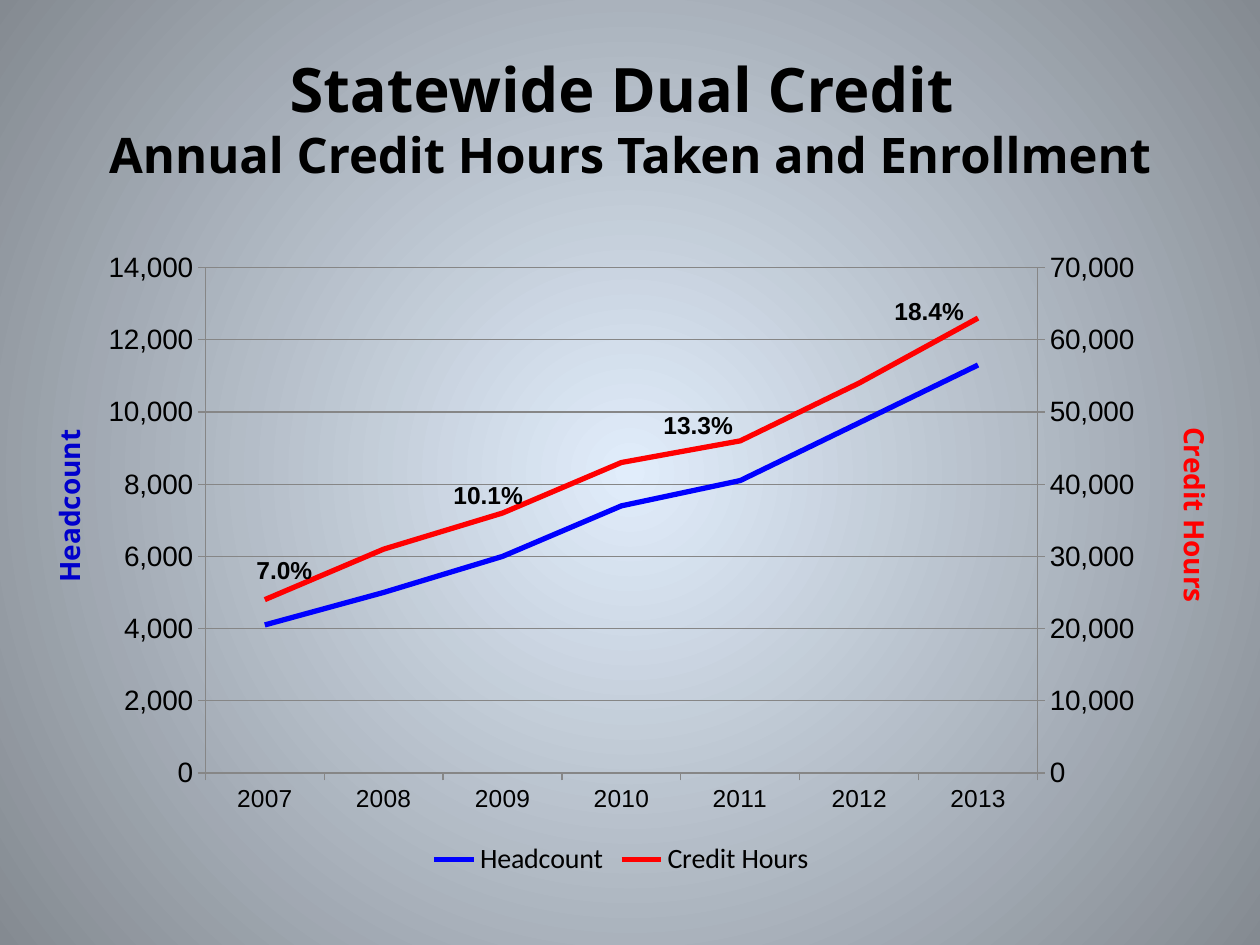
from copy import deepcopy

from lxml import etree
from pptx import Presentation
from pptx.chart.data import CategoryChartData
from pptx.dml.color import RGBColor
from pptx.enum.chart import XL_CHART_TYPE, XL_LEGEND_POSITION, XL_TICK_MARK
from pptx.enum.text import MSO_ANCHOR, MSO_AUTO_SIZE, PP_ALIGN
from pptx.oxml import parse_xml
from pptx.oxml.ns import nsdecls, qn
from pptx.util import Emu, Pt

PX = 914400 // 126
COLORS = {
    "glow": "E1EDFB", "edge": "848A91", "text": "000000", "grid": "868686",
    "blue": "0000FF", "navy": "0000CC", "red": "FF0000",
}


def rgb(name):
    return RGBColor.from_string(COLORS[name])


def add_text(box, lines, font, color="text", align=PP_ALIGN.CENTER):
    """Add bold lines, given as (text, points), in a box of px lengths."""
    shape = slide.shapes.add_textbox(*[Emu(n * PX) for n in box])
    frame = shape.text_frame
    frame.word_wrap = True
    for i, (text, size) in enumerate(lines):
        para = frame.paragraphs[0] if i == 0 else frame.add_paragraph()
        para.text = text
        para.alignment = align
        para.font.name = font
        para.font.size = Pt(size)
        para.font.bold = True
        para.font.color.rgb = rgb(color)
    return shape


prs = Presentation()
prs.slide_width, prs.slide_height = Emu(1260 * PX), Emu(945 * PX)
slide = prs.slides.add_slide(prs.slide_layouts[6])

# Background: a round glow from the centre
fill = slide.background.fill
fill.gradient()
for stop, name, place in zip(fill.gradient_stops, ("glow", "edge"), (0, 1)):
    stop.color.rgb = rgb(name)
    stop.position = place
grad = slide.element.find(".//" + qn("a:gradFill"))
grad.replace(grad.find(qn("a:lin")), parse_xml(
    f'<a:path {nsdecls("a")} path="circle">'
    '<a:fillToRect l="50000" t="50000" r="50000" b="50000"/></a:path>'))

# Chart
data = CategoryChartData(number_format="#,##0")
data.categories = [str(year) for year in range(2007, 2014)]
data.add_series("Headcount", (4100, 5000, 6000, 7400, 8100, 9700, 11300))
data.add_series("Credit Hours",
                (24000, 31000, 36000, 43000, 46000, 54000, 63000))
chart = slide.shapes.add_chart(
    XL_CHART_TYPE.LINE_STACKED,
    *[Emu(n * PX) for n in (88, 242, 1067, 640)], data).chart
chart.has_title = False
chart.font.name = "Calibri"
chart.font.size = Pt(10)
chart.font.color.rgb = rgb("text")
chart.has_legend = True
chart.legend.position = XL_LEGEND_POSITION.BOTTOM
chart.legend.include_in_layout = False
chart.legend.font.size = Pt(16)

for series, name in zip(chart.plots[0].series, ("blue", "red")):
    series.smooth = False
    series.format.line.color.rgb = rgb(name)
    series.format.line.width = Pt(3)

head = chart.value_axis
for axis, size in ((chart.category_axis, 14), (head, 16)):
    axis.major_tick_mark = XL_TICK_MARK.OUTSIDE
    axis.minor_tick_mark = XL_TICK_MARK.NONE
    axis.tick_labels.font.name = "Arial"
    axis.tick_labels.font.size = Pt(size)
    axis.format.line.color.rgb = rgb("grid")
head.minimum_scale, head.maximum_scale, head.major_unit = 0, 14000, 2000
head.has_major_gridlines = True
head.major_gridlines.format.line.color.rgb = rgb("grid")
head.tick_labels.number_format = "#,##0"
head.tick_labels.number_format_is_linked = False

# Second axis: credit hours move to a line plot of their own
area = chart.element.find(".//" + qn("c:plotArea"))
left = area.find(qn("c:lineChart"))
right = deepcopy(left)
left.remove(left.findall(qn("c:ser"))[1])
right.remove(right.findall(qn("c:ser"))[0])
left.addnext(right)
cat, val = area.find(qn("c:catAx")), area.find(qn("c:valAx"))
cat2, val2 = deepcopy(cat), deepcopy(val)
val.addnext(val2)
val2.addnext(cat2)
for node, ids in ((cat2, ("501", "502")), (val2, ("502", "501"))):
    node.find(qn("c:axId")).set("val", ids[0])
    node.find(qn("c:crossAx")).set("val", ids[1])
for node, name in zip(right.findall(qn("c:axId")), ("501", "502")):
    node.set("val", name)
cat2.find(qn("c:delete")).set("val", "1")
val2.remove(val2.find(qn("c:majorGridlines")))
for tag, value in (("axPos", "r"), ("crosses", "max"), ("majorUnit", "10000")):
    val2.find(qn("c:" + tag)).set("val", value)
val2.find(qn("c:scaling")).find(qn("c:max")).set("val", "70000")

# Fixed place for the plot inside the chart
for old in area.findall(qn("c:layout")):
    area.remove(old)
layout = etree.Element(qn("c:layout"))
area.insert(0, layout)
manual = etree.SubElement(layout, qn("c:manualLayout"))
for tag, value in (("layoutTarget", "inner"), ("xMode", "edge"),
                   ("yMode", "edge"), ("x", "0.11"), ("y", "0.04"),
                   ("w", "0.78"), ("h", "0.79")):
    etree.SubElement(manual, qn("c:" + tag)).set("val", value)

# Axis names, title and share labels
for text, x, y, turn, color in (("Headcount", -160, 475, 270, "navy"),
                                ("Credit Hours", 950, 484, 90, "red")):
    add_text((x, y, 474, 62), [(text, 16)], "Open Sans", color).rotation = turn

title = add_text((63, 38, 1134, 158),
                 [("Statewide Dual Credit ", 35),
                  ("Annual Credit Hours Taken and Enrollment", 28)],
                 "Open Sans")
title.text_frame.vertical_anchor = MSO_ANCHOR.MIDDLE

for text, x, y in (("18.4%", 882, 290), ("13.3%", 651, 404),
                   ("7.0%", 244, 549), ("10.1%", 441, 474)):
    share = add_text((x, y, 147, 43), [(text, 14)], "Arial",
                     align=PP_ALIGN.LEFT)
    share.text_frame.auto_size = MSO_AUTO_SIZE.SHAPE_TO_FIT_TEXT

prs.save("out.pptx")
